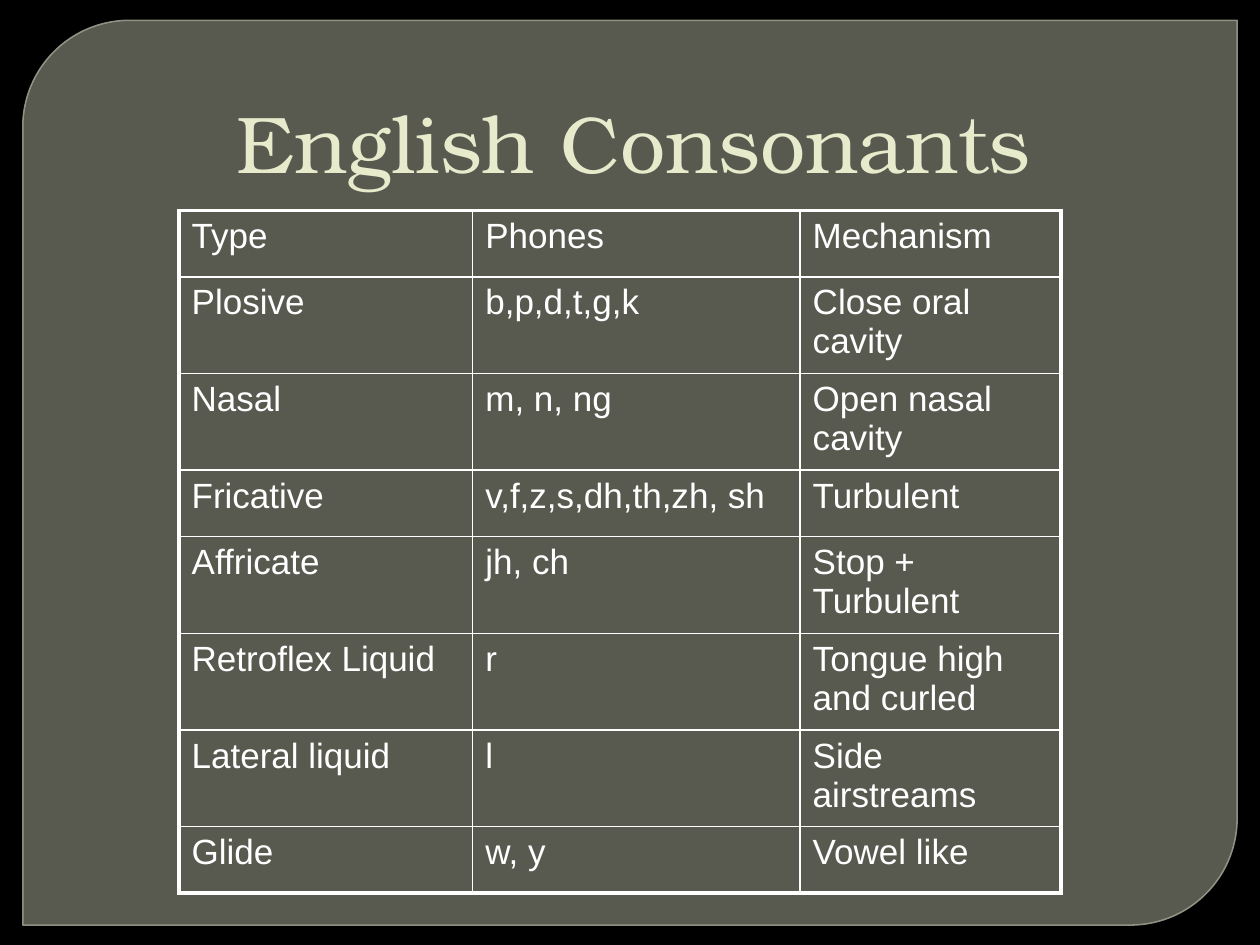
from dataclasses import dataclass

from lxml.etree import SubElement
from pptx import Presentation
from pptx.dml.color import RGBColor
from pptx.enum.shapes import MSO_SHAPE
from pptx.enum.text import MSO_ANCHOR, PP_ALIGN
from pptx.oxml.ns import qn
from pptx.util import Cm, Pt

TITLE = "English Consonants"
CONSONANTS = [
    ("Type", "Phones", "Mechanism"),
    ("Plosive", "b,p,d,t,g,k", "Close oral cavity"),
    ("Nasal", "m, n, ng", "Open nasal cavity"),
    ("Fricative", "v,f,z,s,dh,th,zh, sh", "Turbulent"),
    ("Affricate", "jh, ch", "Stop + Turbulent"),
    ("Retroflex Liquid", "r", "Tongue high and curled"),
    ("Lateral liquid", "l", "Side airstreams"),
    ("Glide", "w, y", "Vowel like"),
]
COLUMN_WIDTHS = (5.92, 6.6, 5.26)
SHORT_ROW, TALL_ROW = 1.34, 1.94
ONE_LINE_LIMIT = 12


@dataclass(frozen=True)
class Theme:
    backdrop: str = "000000"
    panel: str = "888B7B"
    panel_edge: str = "9DA090"
    heading: str = "E7EACB"
    body: str = "FFFFFF"
    heading_font: str = "TeX Gyre Bonum"
    body_font: str = "Arial"
    heading_size: float = 46
    body_size: float = 20
    outer_line: float = 2.25
    inner_line: float = 1


THEME = Theme()


def paint(fill, color, opacity=100):
    fill.solid()
    fill.fore_color.rgb = RGBColor.from_string(color)
    if opacity < 100:
        tone = fill._xPr.find(qn("a:solidFill"))[0]
        SubElement(tone, qn("a:alpha"), val=str(opacity * 1000))


def write(para, text, font, size, color):
    span = para.add_run()
    span.text = text
    span.font.name = font
    span.font.size = Pt(size)
    span.font.color.rgb = RGBColor.from_string(color)


def add_panel(page):
    panel = page.shapes.add_shape(
        MSO_SHAPE.ROUND_2_DIAG_RECTANGLE, Cm(0.46), Cm(0.41), Cm(24.48), Cm(18.24)
    )
    panel.adjustments[0] = 0.118
    panel.adjustments[1] = 0
    panel.shadow.inherit = False
    paint(panel.fill, THEME.panel, 65)
    panel.line.width = Pt(0.87)
    paint(panel.line.fill, THEME.panel_edge, 88)


def add_title(page):
    box = page.shapes.add_textbox(Cm(1.27), Cm(0.76), Cm(22.86), Cm(3.18))
    frame = box.text_frame
    frame.word_wrap = True
    frame.vertical_anchor = MSO_ANCHOR.BOTTOM
    frame.margin_left = Cm(0.4)
    para = frame.paragraphs[0]
    para.alignment = PP_ALIGN.CENTER
    write(para, TITLE, THEME.heading_font, THEME.heading_size, THEME.heading)


def draw_borders(cell, outer_sides):
    properties = cell._tc.get_or_add_tcPr()
    for side, is_outer in outer_sides.items():
        width = THEME.outer_line if is_outer else THEME.inner_line
        edge = SubElement(properties, qn(f"a:ln{side}"), w=str(Pt(width)))
        solid = SubElement(edge, qn("a:solidFill"))
        SubElement(solid, qn("a:srgbClr"), val=THEME.body)


def add_consonant_table(page):
    last_row, last_column = len(CONSONANTS) - 1, len(COLUMN_WIDTHS) - 1
    heights = [
        TALL_ROW if len(mechanism) > ONE_LINE_LIMIT else SHORT_ROW
        for _, _, mechanism in CONSONANTS
    ]
    table = page.shapes.add_table(
        len(CONSONANTS), len(COLUMN_WIDTHS), Cm(3.61), Cm(4.24),
        Cm(sum(COLUMN_WIDTHS)), Cm(sum(heights)),
    ).table
    table.first_row = False
    table.horz_banding = False
    for column, width in zip(table.columns, COLUMN_WIDTHS):
        column.width = Cm(width)
    for row, height in zip(table.rows, heights):
        row.height = Cm(height)
    for r, entries in enumerate(CONSONANTS):
        for c, text in enumerate(entries):
            cell = table.cell(r, c)
            draw_borders(cell, {
                "L": c == 0, "R": c == last_column, "T": r == 0, "B": r == last_row,
            })
            cell.fill.background()
            para = cell.text_frame.paragraphs[0]
            write(para, text, THEME.body_font, THEME.body_size, THEME.body)


def main():
    deck = Presentation()
    deck.slide_width, deck.slide_height = Cm(25.4), Cm(19.05)
    page = deck.slides.add_slide(deck.slide_layouts[6])
    paint(page.background.fill, THEME.backdrop)
    add_panel(page)
    add_title(page)
    add_consonant_table(page)
    deck.save("out.pptx")


if __name__ == "__main__":
    main()
